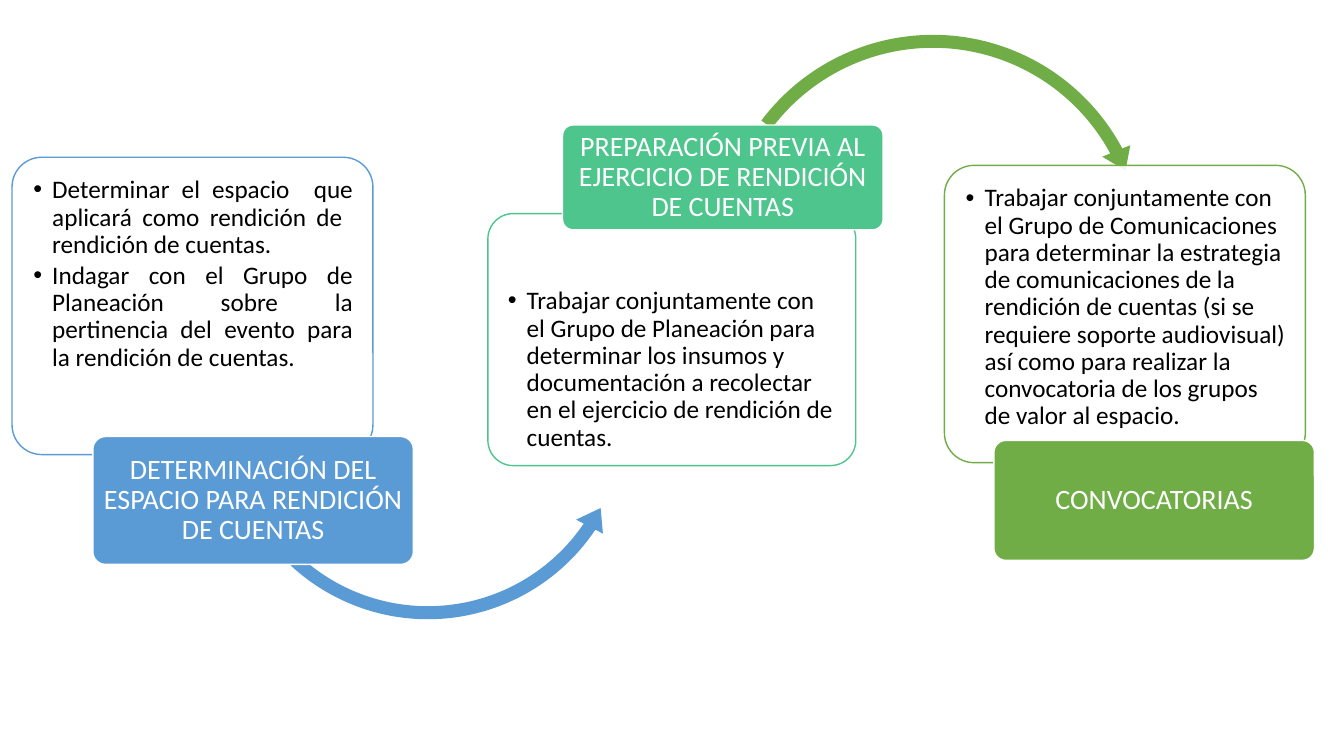
from lxml import etree
from pptx import Presentation
from pptx import util as u
from pptx.dml.color import RGBColor
from pptx.enum import shapes, text
from pptx.oxml import ns

BLUE = RGBColor(0x5B, 0x9B, 0xD5)
TEAL = RGBColor(0x4D, 0xC5, 0x8D)
GREEN = RGBColor(0x70, 0xAD, 0x47)
WHITE = RGBColor(0xFF, 0xFF, 0xFF)
BLACK = RGBColor(0, 0, 0)
FONT = "Calibri"
LABEL_WIDTH = 229
JUSTIFY = text.PP_ALIGN.JUSTIFY
LEFT = text.PP_ALIGN.LEFT
SHAPE = shapes.MSO_SHAPE

STEPS = [
    {
        "color": BLUE,
        "card": (8.6, 112.3, 257.8, 212.4),
        "top_inset": 8,
        "align": JUSTIFY,
        "bullets": [
            "Determinar el espacio  que aplicará como rendición de  rendición de cuentas.",
            "Indagar con el Grupo de Planeación sobre la pertinencia del evento para la rendición de cuentas.",
        ],
        "label": (66.3, 311.8, LABEL_WIDTH, 91.4),
        "title": "DETERMINACIÓN DEL ESPACIO PARA RENDICIÓN DE CUENTAS",
        "arrow": (SHAPE.LEFT_CIRCULAR_ARROW, 155.5, 148.3, 300.2, 0,
                  (0.031, 3.823, 20.375, 89.042, 0.036)),
    },
    {
        "color": TEAL,
        "card": (348.5, 152.6, 262.8, 180),
        "top_inset": 48,
        "align": LEFT,
        "bullets": [
            "Trabajar conjuntamente con el Grupo de Planeación para determinar los insumos y "
            "documentación a recolectar en el ejercicio de rendición de cuentas.",
        ],
        "label": (401.8, 89.3, LABEL_WIDTH, 74.9),
        "title": "PREPARACIÓN PREVIA AL EJERCICIO DE RENDICIÓN DE CUENTAS",
        "arrow": (SHAPE.CIRCULAR_ARROW, 506.9, 18.7, 319, 10.9,
                  (0.029, 3.578, 192.516, 123.605, 0.034)),
        "arrow_color": GREEN,
    },
    {
        "color": GREEN,
        "card": (674.6, 118.1, 257.8, 212.4),
        "top_inset": 8,
        "align": LEFT,
        "bullets": [
            "Trabajar conjuntamente con el Grupo de Comunicaciones para determinar la estrategia "
            "de comunicaciones de la rendición de cuentas (si se requiere soporte audiovisual) "
            "así como para realizar la convocatoria de los grupos de valor al espacio.",
        ],
        "label": (709.9, 314.6, LABEL_WIDTH, 85.7),
        "title": "CONVOCATORIAS",
    },
]


def add_filled(slide, kind, box, fill, adjustments, line=None):
    shape = slide.shapes.add_shape(kind, *(u.Pt(length) for length in box))
    shape.shadow.inherit = False
    for index, value in enumerate(adjustments):
        shape.adjustments[index] = value
    shape.fill.solid()
    shape.fill.fore_color.rgb = fill
    if line is None:
        shape.line.fill.background()
    else:
        shape.line.color.rgb = line
        shape.line.width = u.Pt(1)
    return shape


def set_frame(shape, anchor, left, top, right, bottom):
    frame = shape.text_frame
    frame.word_wrap = True
    frame.vertical_anchor = anchor
    frame.margin_left, frame.margin_top = u.Pt(left), u.Pt(top)
    frame.margin_right, frame.margin_bottom = u.Pt(right), u.Pt(bottom)
    return frame


def write(paragraph, content, size, color, align):
    paragraph.alignment = align
    paragraph.line_spacing = 0.9
    run = paragraph.add_run()
    run.text = content
    run.font.name = FONT
    run.font.size = u.Pt(size)
    run.font.color.rgb = color


def add_bullet(paragraph):
    paragraph.level = 1
    paragraph.space_after = u.Pt(2.7)
    properties = paragraph._p.get_or_add_pPr()
    properties.set("marL", str(u.Pt(13.5)))
    properties.set("indent", str(-u.Pt(13.5)))
    etree.SubElement(properties, ns.qn("a:buFont")).set("typeface", "Arial")
    etree.SubElement(properties, ns.qn("a:buChar")).set("char", "•")


def add_card(slide, step):
    card = add_filled(slide, SHAPE.ROUNDED_RECTANGLE, step["card"], WHITE, [0.1], step["color"])
    color = card.fill._xPr.find(".//" + ns.qn("a:srgbClr"))
    etree.SubElement(color, ns.qn("a:alpha")).set("val", "90000")
    frame = set_frame(card, text.MSO_ANCHOR.TOP, 9, step["top_inset"], 8, 0)
    for index, content in enumerate(step["bullets"]):
        paragraph = frame.add_paragraph() if index else frame.paragraphs[0]
        add_bullet(paragraph)
        write(paragraph, content, 18, BLACK, step["align"])


def add_arrow(slide, step):
    kind, left, top, size, rotation, adjustments = step["arrow"]
    color = step.get("arrow_color", step["color"])
    arrow = add_filled(slide, kind, (left, top, size, size), color, adjustments)
    arrow.rotation = rotation


def add_label(slide, step):
    label = add_filled(slide, SHAPE.ROUNDED_RECTANGLE, step["label"], step["color"], [0.1], WHITE)
    frame = set_frame(label, text.MSO_ANCHOR.MIDDLE, 3, 2, 3, 2)
    write(frame.paragraphs[0], step["title"], 20, WHITE, text.PP_ALIGN.CENTER)


def main():
    presentation = Presentation()
    presentation.slide_width, presentation.slide_height = u.Pt(960), u.Pt(540)
    slide = presentation.slides.add_slide(presentation.slide_layouts[6])
    for step in STEPS:
        add_card(slide, step)
        if "arrow" in step:
            add_arrow(slide, step)
        add_label(slide, step)
    presentation.save("out.pptx")


if __name__ == "__main__":
    main()
